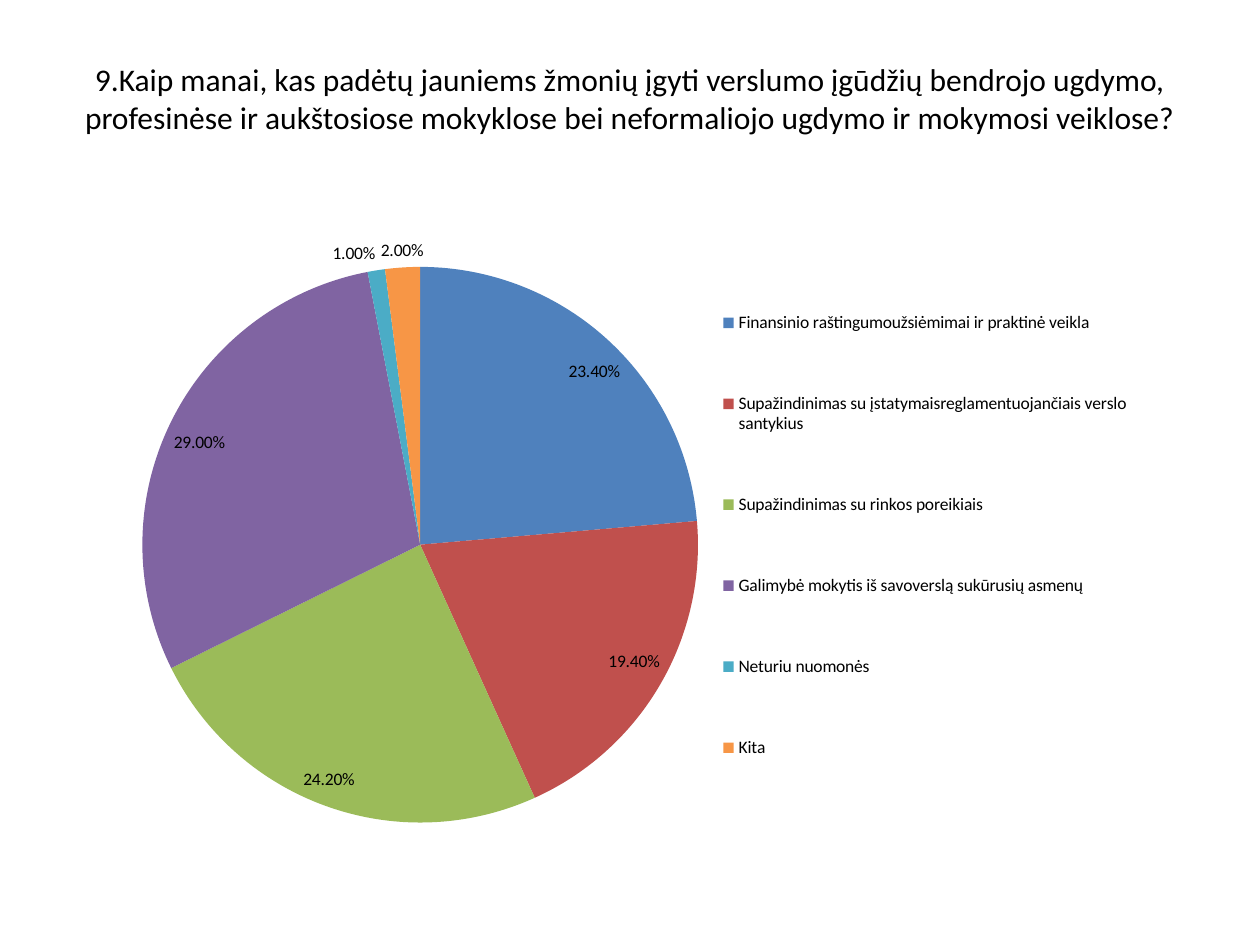
from dataclasses import dataclass

import pptx
import pptx.chart.data
import pptx.dml.color
import pptx.enum.chart
import pptx.enum.text
import pptx.oxml
import pptx.oxml.ns
import pptx.util
from pptx.util import Inches


@dataclass(frozen=True)
class Theme:
    font: str = "Calibri"
    text: str = "000000"
    title_size: int = 18
    chart_size: int = 10


@dataclass(frozen=True)
class Answer:
    label: str
    share: float
    color: str


@dataclass(frozen=True)
class Region:
    """Part of the chart area, as fractions of its width and height."""
    x: float
    y: float
    w: float
    h: float


THEME = Theme()
QUESTION = (
    "9.Kaip manai, kas padėtų jauniems žmonių įgyti verslumo įgūdžių bendrojo ugdymo, "
    "profesinėse ir aukštosiose mokyklose bei neformaliojo ugdymo ir mokymosi veiklose?"
)
ANSWERS = [
    Answer("Finansinio raštingumoužsiėmimai ir praktinė veikla", 0.234, "4F81BD"),
    Answer("Supažindinimas su įstatymaisreglamentuojančiais verslo santykius", 0.194, "C0504D"),
    Answer("Supažindinimas su rinkos poreikiais", 0.242, "9BBB59"),
    Answer("Galimybė mokytis iš savoverslą sukūrusių asmenų", 0.29, "8064A2"),
    Answer("Neturiu nuomonės", 0.01, "4BACC6"),
    Answer("Kita", 0.02, "F79646"),
]
PIE_REGION = Region(0.07, 0.07, 0.49, 0.9)
LEGEND_REGION = Region(0.57, 0.05, 0.38, 0.91)


def rgb(color: str) -> pptx.dml.color.RGBColor:
    return pptx.dml.color.RGBColor.from_string(color)


def style_font(font, size: int) -> None:
    for attribute, value in {"name": THEME.font, "size": pptx.util.Pt(size), "bold": False}.items():
        setattr(font, attribute, value)
    font.color.rgb = rgb(THEME.text)


def place(part, region: Region, before: tuple[str, ...], inner: bool = False) -> None:
    """Give a chart part a manual layout, ahead of the named sibling elements."""
    for old in part.findall(pptx.oxml.ns.qn("c:layout")):
        part.remove(old)
    target = '<c:layoutTarget val="inner"/>' if inner else ""
    modes = '<c:xMode val="edge"/><c:yMode val="edge"/>'
    sizes = "".join(f'<c:{side} val="{getattr(region, side)}"/>' for side in "xywh")
    layout = pptx.oxml.parse_xml(
        f'<c:layout {pptx.oxml.ns.nsdecls("c")}><c:manualLayout>'
        f"{target}{modes}{sizes}</c:manualLayout></c:layout>"
    )
    part.insert_element_before(layout, *before)


def add_question(slide) -> None:
    question = slide.shapes.add_textbox(Inches(0.5), Inches(0.3), Inches(9), Inches(1.25))
    frame = question.text_frame
    frame_format = {
        "word_wrap": True,
        "vertical_anchor": pptx.enum.text.MSO_ANCHOR.MIDDLE,
        "margin_bottom": Inches(0.35),
    }
    for attribute, value in frame_format.items():
        setattr(frame, attribute, value)
    paragraph = frame.paragraphs[0]
    paragraph.alignment = pptx.enum.text.PP_ALIGN.CENTER
    run = paragraph.add_run()
    run.text = QUESTION
    style_font(run.font, THEME.title_size)


def add_answer_pie(slide) -> None:
    data = pptx.chart.data.CategoryChartData(number_format="0.00%")
    data.categories = [answer.label for answer in ANSWERS]
    data.add_series("Series 1", [answer.share for answer in ANSWERS])
    chart = slide.shapes.add_chart(
        pptx.enum.chart.XL_CHART_TYPE.PIE,
        Inches(0.5), Inches(1.75), Inches(9), Inches(4.95), data,
    ).chart
    style_font(chart.font, THEME.chart_size)
    chart.has_title = False
    chart.has_legend = True
    chart.legend.position = pptx.enum.chart.XL_LEGEND_POSITION.RIGHT
    chart.legend.include_in_layout = False

    pie = chart.plots[0]
    pie.vary_by_categories = True
    pie.has_data_labels = True
    label_format = {
        "show_value": True,
        "show_percentage": False,
        "number_format": "0.00%",
        "number_format_is_linked": False,
        "position": pptx.enum.chart.XL_LABEL_POSITION.BEST_FIT,
    }
    for attribute, value in label_format.items():
        setattr(pie.data_labels, attribute, value)
    for index, answer in enumerate(ANSWERS):
        fill = pie.series[0].points[index].format.fill
        fill.solid()
        fill.fore_color.rgb = rgb(answer.color)

    plot_area = chart.element.chart.plotArea
    place(plot_area, PIE_REGION, ("c:pieChart",), inner=True)
    legend = chart.element.chart.find(pptx.oxml.ns.qn("c:legend"))
    place(legend, LEGEND_REGION, ("c:overlay", "c:spPr", "c:txPr"))


def main() -> None:
    deck = pptx.Presentation()
    deck.slide_width, deck.slide_height = Inches(10), Inches(7.5)
    slide = deck.slides.add_slide(deck.slide_layouts[6])
    add_question(slide)
    add_answer_pie(slide)
    deck.save("out.pptx")


if __name__ == "__main__":
    main()
